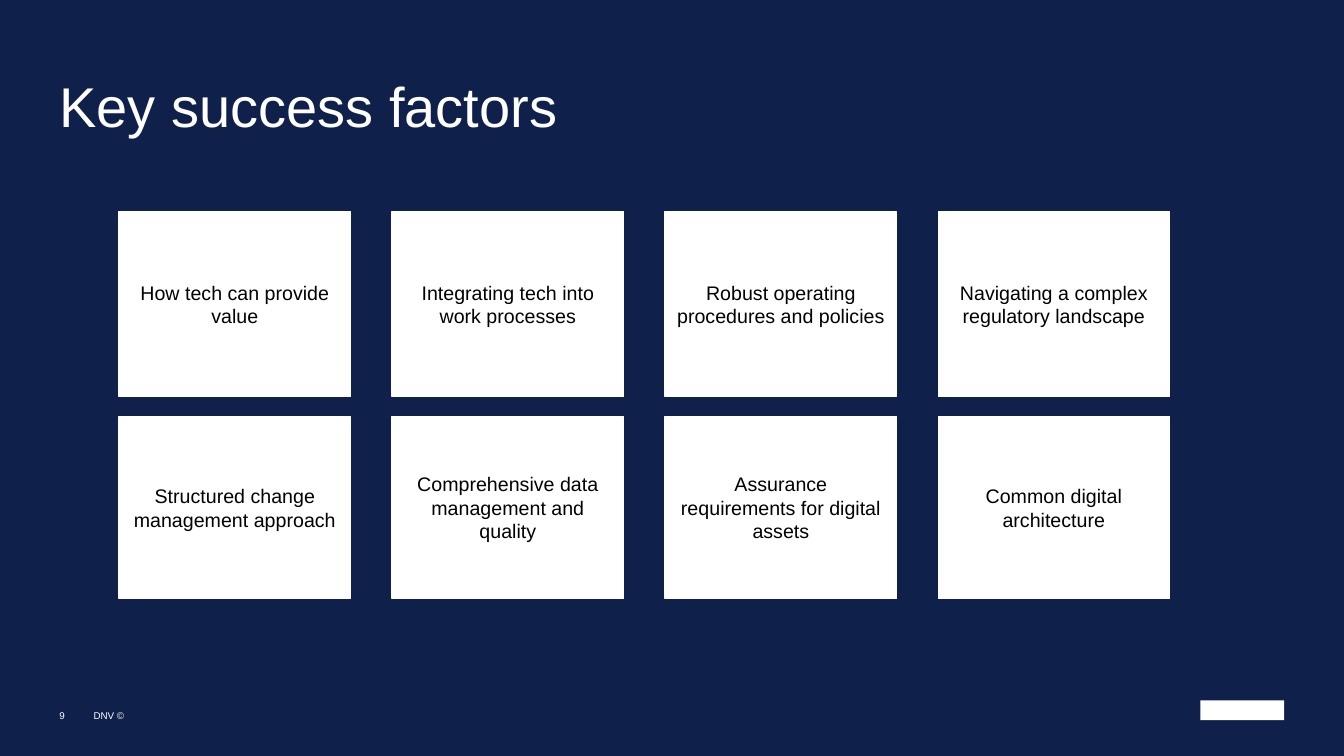
"""Builds the key success factors slide."""
from dataclasses import dataclass

from pptx import Presentation
from pptx import util as u
from pptx.dml.color import RGBColor
from pptx.enum import shapes, text


@dataclass(frozen=True)
class Theme:
    """Colours and type sizes of the slide."""
    navy: RGBColor = RGBColor(0x0F, 0x20, 0x4B)
    white: RGBColor = RGBColor(0xFF, 0xFF, 0xFF)
    black: RGBColor = RGBColor(0x00, 0x00, 0x00)
    font: str = "Arial"
    title: int = 40
    body: int = 14
    small: int = 7


class Deck:
    """Holds the theme and the current slide, and draws its elements."""

    def __init__(self, theme):
        """Open a navy widescreen slide with a title."""
        self.theme = theme
        self.prs = Presentation()
        self.prs.slide_width, self.prs.slide_height = u.Cm(33.87), u.Cm(19.05)
        self.s = self.prs.slides.add_slide(self.prs.slide_layouts[5])
        fill = self.s.background.fill
        fill.solid()
        fill.fore_color.rgb = theme.navy

    def set_text(self, tf, words, size, color, align=text.PP_ALIGN.LEFT):
        """Put one styled paragraph into a text frame."""
        tf.text = words
        p = tf.paragraphs[0]
        p.alignment = align
        p.font.name, p.font.size = self.theme.font, u.Pt(size)
        p.font.color.rgb = color
        return p

    def no_margins(self, tf):
        """Remove the insets of a text frame."""
        tf.margin_left = tf.margin_right = tf.margin_top = tf.margin_bottom = 0

    def title(self, words, x, y, w, h):
        """Place and format the title."""
        sp = self.s.shapes.title
        sp.left, sp.top, sp.width, sp.height = map(u.Cm, (x, y, w, h))
        tf = sp.text_frame
        self.no_margins(tf)
        tf.auto_size = text.MSO_AUTO_SIZE.NONE
        tf.vertical_anchor = text.MSO_ANCHOR.MIDDLE
        p = self.set_text(tf, words, self.theme.title, self.theme.white)
        p.line_spacing = 0.83

    def label(self, words, x, y, w, h):
        """Add a small footer text."""
        tf = self.s.shapes.add_textbox(*map(u.Cm, (x, y, w, h))).text_frame
        self.no_margins(tf)
        tf.word_wrap = True
        self.set_text(tf, words, self.theme.small, self.theme.white)

    def box(self, x, y, w, h):
        """Add a plain white rectangle."""
        sp = self.s.shapes.add_shape(shapes.MSO_SHAPE.RECTANGLE, *map(u.Cm, (x, y, w, h)))
        sp.shadow.inherit = False
        sp.fill.solid()
        sp.fill.fore_color.rgb = self.theme.white
        sp.line.fill.background()
        return sp

    def card(self, words, x, y, w, h):
        """Add an outlined white box with centred text."""
        sp = self.box(x, y, w, h)
        sp.line.color.rgb, sp.line.width = self.theme.white, u.Pt(0.75)
        tf = sp.text_frame
        tf.word_wrap = True
        tf.vertical_anchor = text.MSO_ANCHOR.MIDDLE
        self.set_text(tf, words, self.theme.body, self.theme.black, text.PP_ALIGN.CENTER)


FACTORS = [
    ["How tech can provide value",
     "Integrating tech into work processes",
     "Robust operating procedures and policies",
     "Navigating a complex regulatory landscape"],
    ["Structured change management approach",
     "Comprehensive data management and quality",
     "Assurance requirements for digital assets",
     "Common digital architecture"],
]
LEFT, TOP, PITCH_X, PITCH_Y = 3, 5.33, 6.88, 5.16
CARD_W, ROW_HEIGHTS = 5.84, (4.67, 4.6)


def main():
    """Build and save the slide."""
    deck = Deck(Theme())
    deck.title("Key success factors", 1.5, 1.5, 31.24, 2.6)
    for row, (factors, height) in enumerate(zip(FACTORS, ROW_HEIGHTS)):
        for col, factor in enumerate(factors):
            deck.card(factor, LEFT + col * PITCH_X, TOP + row * PITCH_Y, CARD_W, height)
    deck.label("9", 1.5, 17.88, 0.74, 0.43)
    deck.label("DNV ©", 2.36, 17.88, 1.2, 0.3)
    deck.box(30.25, 17.65, 2.11, 0.5)
    deck.prs.save("out.pptx")


if __name__ == "__main__":
    main()
